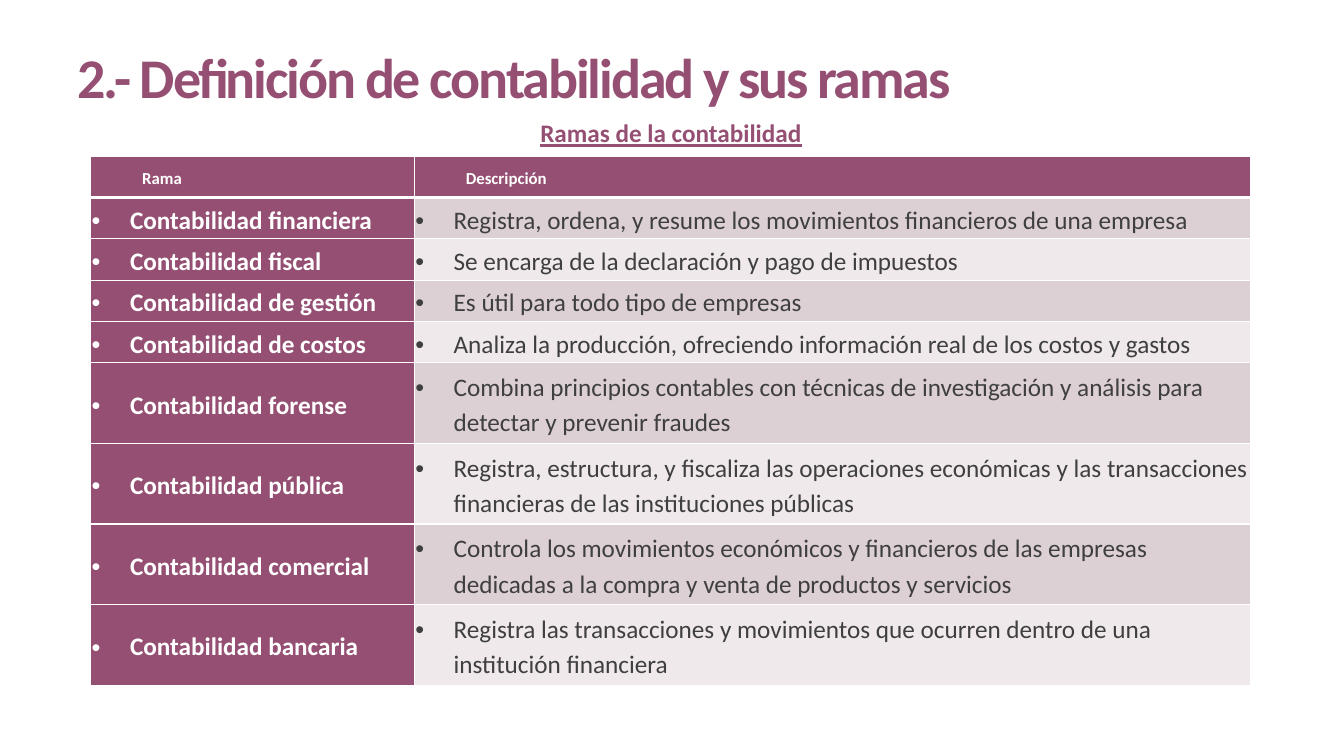
from lxml import etree
from pptx import Presentation
from pptx.dml.color import RGBColor
from pptx.enum.text import MSO_ANCHOR, PP_ALIGN
from pptx.oxml.ns import qn
from pptx.util import Inches, Pt

MIDDLE, TOP = MSO_ANCHOR.MIDDLE, MSO_ANCHOR.TOP
CENTER, LEFT = PP_ALIGN.CENTER, PP_ALIGN.LEFT

# Content
TITLE = "2.- Definición de contabilidad y sus ramas"
SUBTITLE = "Ramas de la contabilidad"
HEADERS = ("Rama", "Descripción")
BRANCHES = [
    ("Contabilidad financiera",
     "Registra, ordena, y resume los movimientos financieros de una empresa"),
    ("Contabilidad fiscal", "Se encarga de la declaración y pago de impuestos"),
    ("Contabilidad de gestión", "Es útil para todo tipo de empresas"),
    ("Contabilidad de costos",
     "Analiza la producción, ofreciendo información real de los costos y gastos"),
    ("Contabilidad forense",
     "Combina principios contables con técnicas de investigación y análisis "
     "para detectar y prevenir fraudes"),
    ("Contabilidad pública",
     "Registra, estructura, y fiscaliza las operaciones económicas y las "
     "transacciones financieras de las instituciones públicas"),
    ("Contabilidad comercial",
     "Controla los movimientos económicos y financieros de las empresas "
     "dedicadas a la compra y venta de productos y servicios"),
    ("Contabilidad bancaria",
     "Registra las transacciones y movimientos que ocurren dentro de una "
     "institución financiera"),
]

# Style
FONT = "Calibri"
PLUM, WHITE, GRAY = "954F72", "FFFFFF", "3F3F3F"
BANDS = ("DDD0D5", "EFE9EB")
COLUMN_WIDTHS = (3.21, 8.29)
ROW_HEIGHTS = [0.41] * 5 + [0.8] * 4


def color(hex_value):
    return RGBColor.from_string(hex_value)


def add_run(paragraph, text, size, hex_value, bold=True):
    run = paragraph.add_run()
    run.text = text
    run.font.name = FONT
    run.font.size = Pt(size)
    run.font.bold = bold
    run.font.color.rgb = color(hex_value)
    return run


def add_heading(slide, text, box, size, anchor, align):
    frame = slide.shapes.add_textbox(*map(Inches, box)).text_frame
    frame.word_wrap = True
    frame.vertical_anchor = anchor
    paragraph = frame.paragraphs[0]
    paragraph.alignment = align
    paragraph.line_spacing = 0.9
    return add_run(paragraph, text, size, PLUM)


def set_borders(cell, bottom_width):
    properties = cell._tc.get_or_add_tcPr()
    for side, width in (("L", 1), ("R", 1), ("T", 1), ("B", bottom_width)):
        line = etree.SubElement(properties, qn(f"a:ln{side}"), w=str(Pt(width)))
        fill = etree.SubElement(line, qn("a:solidFill"))
        etree.SubElement(fill, qn("a:srgbClr"), val=WHITE)


def set_indent(paragraph, margin, bullet):
    properties = paragraph._p.get_or_add_pPr()
    properties.set("marL", str(Inches(margin)))
    properties.set("indent", str(-Inches(margin) if bullet else 0))
    if bullet:
        etree.SubElement(properties, qn("a:buFont"), typeface="Arial")
        etree.SubElement(properties, qn("a:buChar"), char="•")
        tabs = etree.SubElement(properties, qn("a:tabLst"))
        etree.SubElement(tabs, qn("a:tab"), pos=str(Inches(0.5)), algn="l")


def fill_cell(cell, text, fill, size, hex_value, bold, is_header):
    set_borders(cell, 3 if is_header else 1)
    cell.fill.solid()
    cell.fill.fore_color.rgb = color(fill)
    cell.vertical_anchor = MIDDLE
    cell.margin_left = cell.margin_right = Inches(0.01)
    cell.margin_top = cell.margin_bottom = Inches(0.01)
    paragraph = cell.text_frame.paragraphs[0]
    set_indent(paragraph, 0.5 if is_header else 0.38, bullet=not is_header)
    paragraph.line_spacing = 1.15
    paragraph.space_after = Pt(8)
    add_run(paragraph, text, size, hex_value, bold)


def add_branch_table(slide):
    rows = [HEADERS] + BRANCHES
    table = slide.shapes.add_table(
        len(rows), len(HEADERS), Inches(0.9), Inches(1.55),
        Inches(sum(COLUMN_WIDTHS)), Inches(sum(ROW_HEIGHTS))).table
    for column, width in zip(table.columns, COLUMN_WIDTHS):
        column.width = Inches(width)
    for row, height in zip(table.rows, ROW_HEIGHTS):
        row.height = Inches(height)
    for row_index, texts in enumerate(rows):
        is_header = row_index == 0
        for column_index, text in enumerate(texts):
            dark = is_header or column_index == 0
            fill = PLUM if dark else BANDS[(row_index - 1) % 2]
            fill_cell(table.cell(row_index, column_index), text, fill,
                      12 if is_header else 18, WHITE if dark else GRAY,
                      dark, is_header)


def main():
    presentation = Presentation()
    presentation.slide_width = Inches(13.33)
    presentation.slide_height = Inches(7.5)
    slide = presentation.slides.add_slide(presentation.slide_layouts[6])

    # Headings
    title = add_heading(slide, TITLE, (0.67, 0.45, 9.81, 0.67), 40, TOP, LEFT)
    title._r.get_or_add_rPr().set("spc", "-150")
    subtitle = add_heading(slide, SUBTITLE, (0.67, 1.12, 11.97, 0.43), 18,
                           MIDDLE, CENTER)
    subtitle.font.underline = True

    # Table of branches
    add_branch_table(slide)
    presentation.save("out.pptx")


if __name__ == "__main__":
    main()
